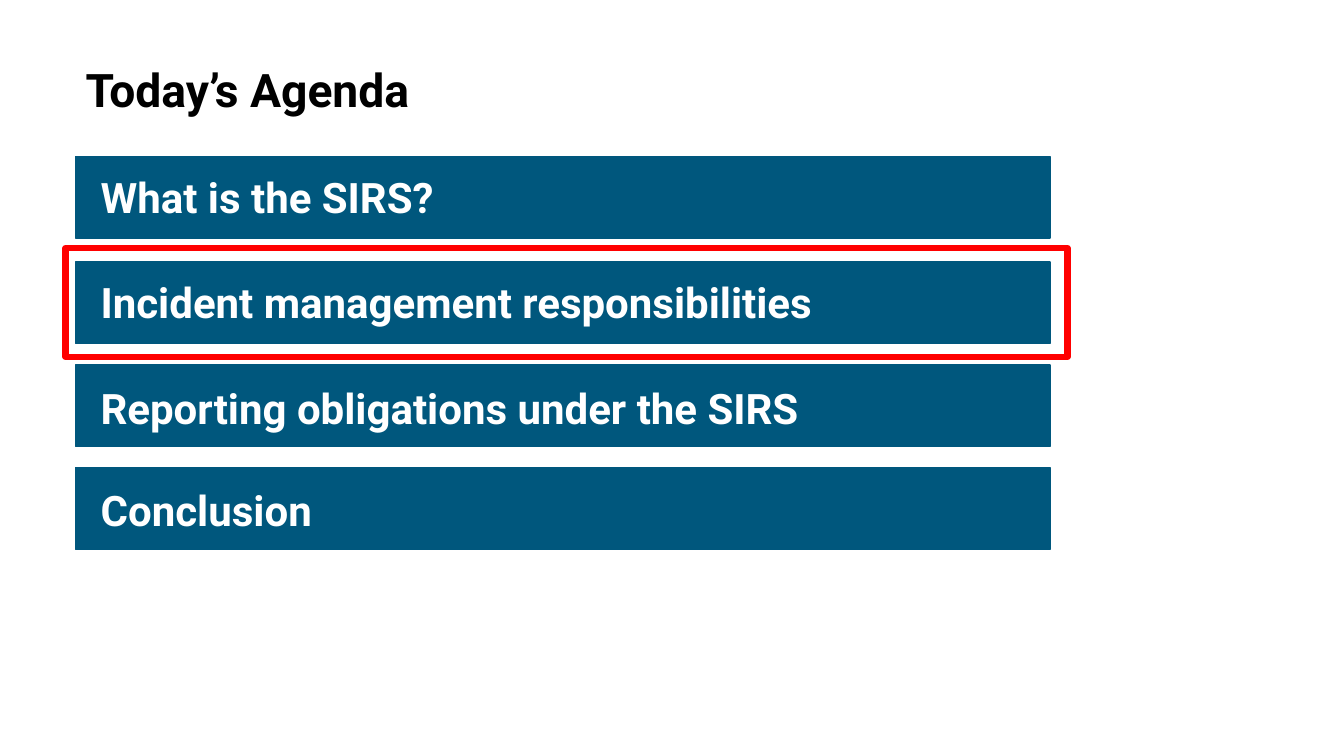
"""Build an agenda slide with four topic bars, the current topic framed in red."""
import pptx
import pptx.dml.color
import pptx.enum.shapes
import pptx.enum.text
import pptx.util

THEME = {
    "font": "Roboto",
    "title": "000000",
    "bar": "00577D",
    "topic": "FFFFFF",
    "highlight": "FF0000",
    "title_size": 33,
    "topic_size": 30,
    "bar_line": 1,
    "highlight_line": 4.5,
}

deck = pptx.Presentation()
deck.slide_width = pptx.util.Inches(13.33)
deck.slide_height = pptx.util.Inches(7.5)
column = deck.slide_width / 80
row = deck.slide_height / 45
agenda = deck.slides.add_slide(deck.slide_layouts[6])


def add_box(left, top, width, height, line_color, line_width):
    """Add an outlined, unfilled rectangle measured in grid columns and rows."""
    box = agenda.shapes.add_shape(
        pptx.enum.shapes.MSO_SHAPE.RECTANGLE,
        round(left * column), round(top * row), round(width * column), round(height * row))
    box.shadow.inherit = False
    box.fill.background()
    box.line.color.rgb = pptx.dml.color.RGBColor.from_string(line_color)
    box.line.width = pptx.util.Pt(line_width)
    return box


def add_label(text, left, top, width, height, size, color):
    """Add a bold line of text measured in grid columns and rows."""
    label = agenda.shapes.add_textbox(
        round(left * column), round(top * row), round(width * column), round(height * row))
    label.text_frame.word_wrap = True
    run = label.text_frame.paragraphs[0].add_run()
    run.text = text
    run.font.name = THEME["font"]
    run.font.size = pptx.util.Pt(size)
    run.font.bold = True
    run.font.color.rgb = pptx.dml.color.RGBColor.from_string(color)
    return label.text_frame


heading = add_label("Today’s Agenda", 4.5, 1.26, 68.9, 8.52, THEME["title_size"], THEME["title"])
heading.vertical_anchor = pptx.enum.text.MSO_ANCHOR.MIDDLE
heading.paragraphs[0].line_spacing = 0.9

topics = [
    ("What is the SIRS?", 9.3, 9.9),
    ("Incident management responsibilities", 15.6, 16.14),
    ("Reporting obligations under the SIRS", 21.72, 22.5),
    ("Conclusion", 27.84, 28.56),
]
for topic, bar_top, topic_top in topics:
    bar = add_box(4.5, bar_top, 58, 4.86, THEME["bar"], THEME["bar_line"])
    bar.fill.solid()
    bar.fill.fore_color.rgb = pptx.dml.color.RGBColor.from_string(THEME["bar"])
    topic_frame = add_label(topic, 5.4, topic_top, 58, 3.66, THEME["topic_size"], THEME["topic"])
    topic_frame.auto_size = pptx.enum.text.MSO_AUTO_SIZE.SHAPE_TO_FIT_TEXT

add_box(3.9, 14.76, 59.64, 6.48, THEME["highlight"], THEME["highlight_line"])

deck.save("out.pptx")
